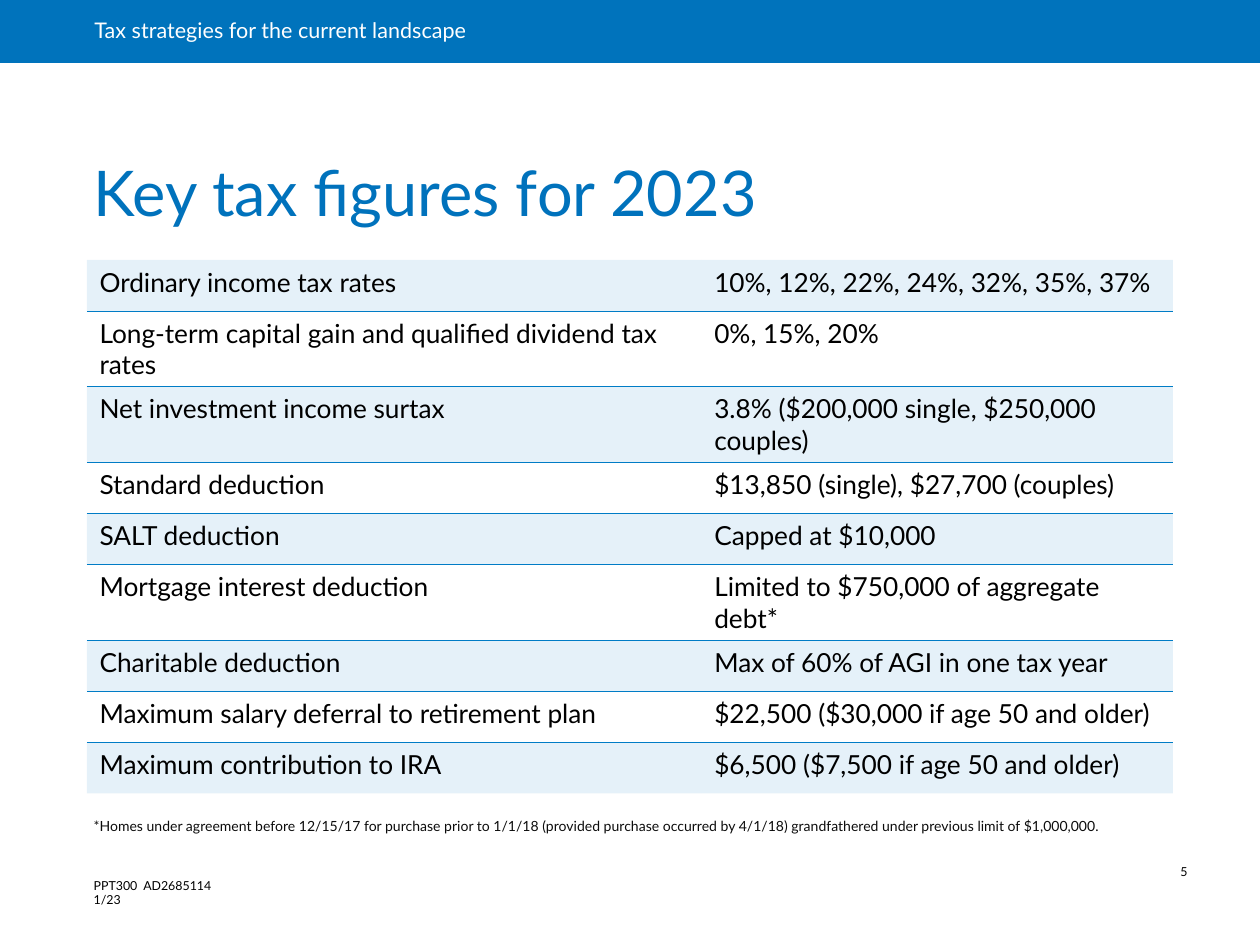
from lxml.etree import SubElement
from pptx import Presentation
from pptx.dml.color import RGBColor
from pptx.enum.shapes import MSO_SHAPE as SHAPE
from pptx.enum.text import MSO_ANCHOR as ANCHOR, MSO_AUTO_SIZE as AUTO, PP_ALIGN as ALIGN
from pptx.oxml import parse_xml
from pptx.oxml.ns import nsdecls, qn
from pptx.util import Pt

FIGURES = [
    ("Ordinary income tax rates", "10%, 12%, 22%, 24%, 32%, 35%, 37%"),
    ("Long-term capital gain and qualified dividend tax rates", "0%, 15%, 20%"),
    ("Net investment income surtax", "3.8% ($200,000 single, $250,000 couples)"),
    ("Standard deduction", "$13,850 (single), $27,700 (couples)"),
    ("SALT deduction", "Capped at $10,000"),
    ("Mortgage interest deduction", "Limited to $750,000 of aggregate debt*"),
    ("Charitable deduction", "Max of 60% of AGI in one tax year"),
    ("Maximum salary deferral to retirement plan", "$22,500 ($30,000 if age 50 and older)"),
    ("Maximum contribution to IRA", "$6,500 ($7,500 if age 50 and older)"),
]
NO_STYLE = "{2D5ABB26-0587-4C30-8999-92F81FD0307C}"
RULE_BLUE = "007CC6"


def rgb(color):
    return RGBColor.from_string(color)


def set_text(frame, text, size, color, margins, spacing=1.0, anchor=ANCHOR.TOP):
    frame.text = text
    frame.word_wrap = True
    frame.auto_size = AUTO.NONE
    frame.vertical_anchor = anchor
    (frame.margin_left, frame.margin_top,
     frame.margin_right, frame.margin_bottom) = [Pt(m) for m in margins]
    paragraph = frame.paragraphs[0]
    paragraph.alignment = ALIGN.LEFT
    paragraph.line_spacing = spacing
    paragraph.space_before = Pt(0)
    font = paragraph.runs[0].font
    font.name, font.size, font.color.rgb = "Lato", Pt(size), rgb(color)


prs = Presentation()
prs.slide_width, prs.slide_height = Pt(720), Pt(540)
slide = prs.slides.add_slide(prs.slide_layouts[1])
title, footnote = slide.placeholders

# Header band
band = slide.shapes.add_shape(SHAPE.RECTANGLE, 0, 0, Pt(720), Pt(36))
band.shadow.inherit = False
band.fill.solid()
band.fill.fore_color.rgb = rgb("0073BC")
band.line.fill.background()
set_text(band.text_frame, "Tax strategies for the current landscape", 12.3, "FFFFFF",
         (54, 0, 16, 0), 0.9, ANCHOR.MIDDLE)

# Title
title.left, title.top, title.width, title.height = Pt(45.5), Pt(113.8), Pt(620.6), Pt(21.6)
set_text(title.text_frame, "Key tax figures for 2023", 36, "0072BC",
         (8, 4, 8, 4), 0.9, ANCHOR.BOTTOM)

# Table of tax figures
row_height = 29.2
frame = slide.shapes.add_table(len(FIGURES), 2, Pt(49.7), Pt(148.5),
                               Pt(620.6), Pt(row_height * len(FIGURES)))
figures = frame.table
figures.first_row = figures.horz_banding = False
figures._tbl.tblPr.find(qn("a:tableStyleId")).text = NO_STYLE
figures.columns[0].width, figures.columns[1].width = Pt(351.3), Pt(269.3)

for r, row in enumerate(FIGURES):
    figures.rows[r].height = Pt(row_height)
    for c, text in enumerate(row):
        cell = figures.cell(r, c)
        cell.text = text
        font = cell.text_frame.paragraphs[0].runs[0].font
        font.name, font.size, font.color.rgb = "Lato", Pt(15), rgb("000000")

        # Rules between rows only
        props = cell._tc.get_or_add_tcPr()
        for tag, ruled in (("lnT", r > 0), ("lnB", r < len(FIGURES) - 1)):
            if ruled:
                props.append(parse_xml(
                    f'<a:{tag} {nsdecls("a")} w="{Pt(0.5)}"><a:solidFill>'
                    f'<a:srgbClr val="{RULE_BLUE}"/></a:solidFill></a:{tag}>'))

        # Pale tint on every other row
        if r % 2 == 0:
            cell.fill.solid()
            cell.fill.fore_color.rgb = rgb(RULE_BLUE)
            tint = props.find(qn("a:solidFill")).find(qn("a:srgbClr"))
            SubElement(tint, qn("a:alpha"), val="10000")
        else:
            cell.fill.background()

# Footnote
footnote.left, footnote.top, footnote.width, footnote.height = Pt(45.5), Pt(465), Pt(620.6), Pt(16)
set_text(footnote.text_frame,
         "*Homes under agreement before 12/15/17 for purchase prior to 1/1/18 (provided purchase "
         "occurred by 4/1/18) grandfathered under previous limit of $1,000,000.",
         8, "0C0C0C", (8, 4, 8, 4), anchor=ANCHOR.BOTTOM)
note_props = footnote.text_frame.paragraphs[0]._p.get_or_add_pPr()
note_props.set("marL", "0")
note_props.set("indent", "0")
SubElement(note_props, qn("a:buNone"))

# Document code and page number
code = slide.shapes.add_textbox(Pt(46.5), Pt(498), Pt(86.4), Pt(24.5))
set_text(code.text_frame, "PPT300  AD2685114  1/23", 7.1, "000000", (7.2, 3.6, 7.2, 3.6))
page = slide.shapes.add_textbox(Pt(674.6), Pt(491.8), Pt(40.3), Pt(14.4))
set_text(page.text_frame, "5", 7.1, "000000", (0, 3, 3, 3), 0.9)

prs.save("out.pptx")
